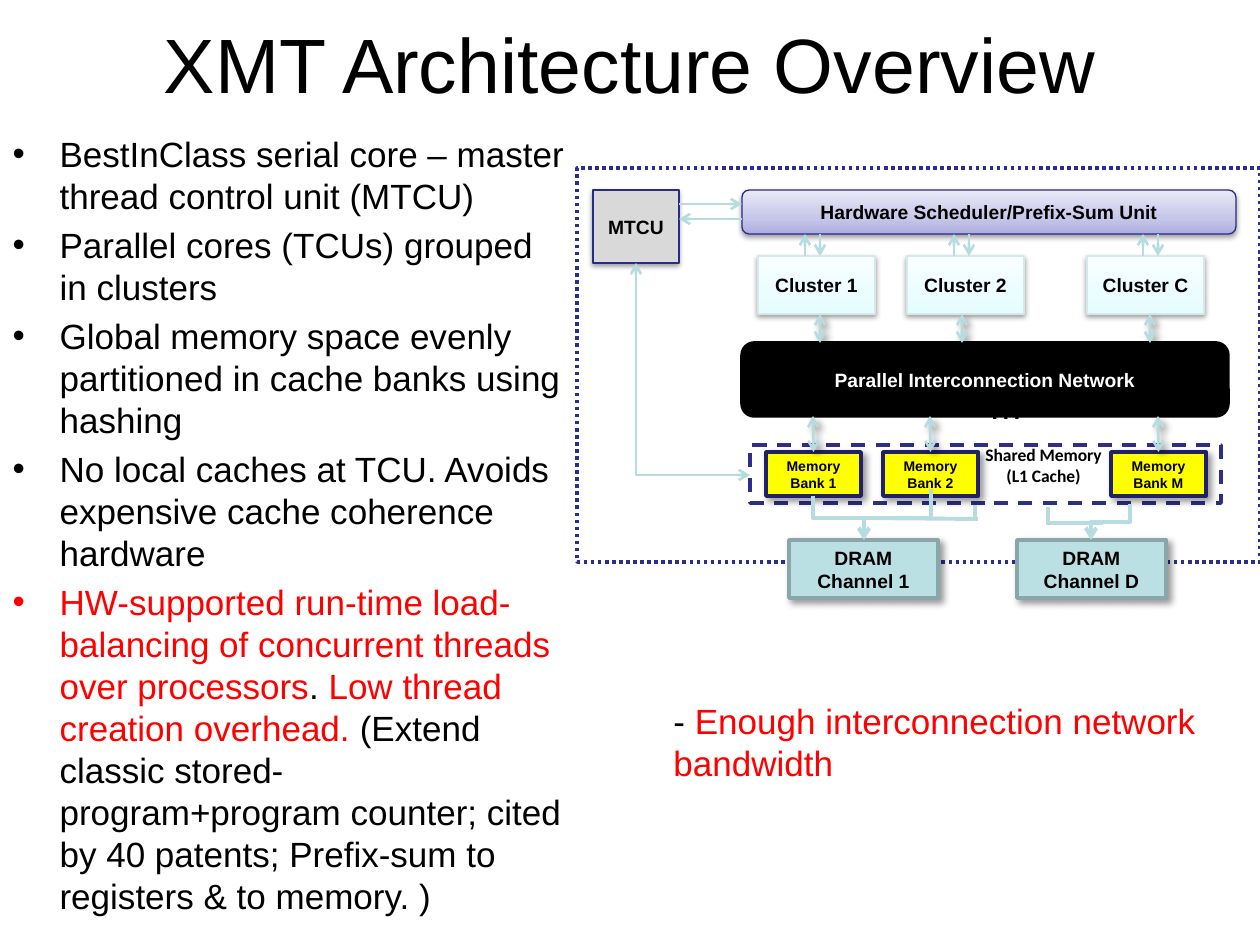
"""Builds the XMT architecture overview slide."""
import copy
from dataclasses import dataclass

import pptx
import pptx.dml.color
import pptx.enum.dml
import pptx.enum.shapes
import pptx.enum.text
import pptx.oxml.ns
import pptx.util
from lxml import etree

qn = pptx.oxml.ns.qn
SHAPES = pptx.enum.shapes.MSO_SHAPE
DASHES = pptx.enum.dml.MSO_LINE
ALIGN = pptx.enum.text.PP_ALIGN
CONNECTORS = pptx.enum.shapes.MSO_CONNECTOR


@dataclass(frozen=True)
class Theme:
    font: str = "Arial"
    caption_font: str = "Calibri"
    black: str = "000000"
    white: str = "FFFFFF"
    red: str = "FF0000"
    frame: str = "2D2D8A"
    outline: str = "2A2A89"
    grey: str = "D9D9D9"
    yellow: str = "FFFF00"
    bank_edge: str = "212166"
    dram: str = "BBE0E3"
    dram_edge: str = "8AA6A8"
    arrow: str = "B6DCDF"
    cluster_edge: str = "D5E8EA"
    cluster_fill: tuple = ("E6FDFF", "ECFDFF", "F8FEFF")
    scheduler_fill: tuple = ("ADADE1", "C6C6E9", "E9E9F7")
    title_size: int = 44
    body_size: int = 20
    label_size: int = 11
    caption_size: int = 10
    bank_size: int = 8
    soft_shadow: tuple = (38, 3.1, 1.6, 90)
    drop_shadow: tuple = (40, 4, 3, 45)


def px(value):
    return pptx.util.Emu(round(value * 914400 / 126))


def rgb(value):
    return pptx.dml.color.RGBColor.from_string(value)


class SlideBuilder:
    def __init__(self, slide, theme):
        self.slide, self.theme = slide, theme

    def place(self, shape, box):
        shape.left, shape.top, shape.width, shape.height = map(px, box)

    def style(self, paragraph, size, color=None, bold=None, font=None, align=None):
        paragraph.font.name = font or self.theme.font
        paragraph.font.size = pptx.util.Pt(size)
        paragraph.font.bold = bold
        paragraph.font.color.rgb = rgb(color or self.theme.black)
        paragraph.alignment = align

    def fill_text(self, frame, paragraphs, size, **style):
        """Each paragraph is a string or a list of (text, color) runs."""
        for index, content in enumerate(paragraphs):
            paragraph = frame.add_paragraph() if index else frame.paragraphs[0]
            self.style(paragraph, size, **style)
            if isinstance(content, str):
                paragraph.add_run().text = content
                continue
            for text, color in content:
                run = paragraph.add_run()
                run.text = text
                run.font.color.rgb = rgb(color)

    def title(self, text, box):
        shape = self.slide.shapes.title
        self.place(shape, box)
        self.fill_text(shape.text_frame, [text], self.theme.title_size, align=ALIGN.CENTER)

    def bullets(self, items, box, indent):
        shape = self.slide.placeholders[1]
        self.place(shape, box)
        shape.text_frame.auto_size = pptx.enum.text.MSO_AUTO_SIZE.NONE
        self.fill_text(shape.text_frame, items, self.theme.body_size)
        for paragraph in shape.text_frame.paragraphs:
            properties = paragraph._p.get_or_add_pPr()
            properties.set("marL", str(px(indent)))
            properties.set("indent", str(-px(indent)))

    def text(self, paragraphs, box, size, wrap=True, **style):
        shape = self.slide.shapes.add_textbox(*map(px, box))
        shape.text_frame.word_wrap = wrap
        self.fill_text(shape.text_frame, paragraphs, size, **style)

    def add_shadow(self, effects, shadow):
        alpha, blur, distance, angle = shadow
        outer = etree.SubElement(effects, qn("a:outerShdw"), blurRad=str(round(blur * 12700)),
                                 dist=str(round(distance * 12700)), dir=str(angle * 60000),
                                 rotWithShape="0")
        color = etree.SubElement(outer, qn("a:srgbClr"), val=self.theme.black)
        etree.SubElement(color, qn("a:alpha"), val=str(alpha * 1000))

    def gradient(self, shape, colors):
        shape.fill.gradient()
        shape.fill.gradient_angle = 90
        stops = shape.element.spPr.find(".//" + qn("a:gsLst"))
        stops.append(copy.deepcopy(stops[0]))
        for stop, color, position in zip(shape.fill.gradient_stops, colors, (0, 0.35, 1)):
            stop.color.rgb, stop.position = rgb(color), position

    def box(self, box, line, width, fill=None, label=None, size=None, color=None,
            kind=SHAPES.RECTANGLE, dash=None, shadow=None):
        shape = self.slide.shapes.add_shape(kind, *map(px, box))
        if fill is None:
            shape.fill.background()
        elif isinstance(fill, tuple):
            self.gradient(shape, fill)
        else:
            shape.fill.solid()
            shape.fill.fore_color.rgb = rgb(fill)
        shape.line.color.rgb = rgb(line)
        shape.line.width = pptx.util.Pt(width)
        if dash is not None:
            shape.line.dash_style = dash
        shape.shadow.inherit = False
        if shadow:
            self.add_shadow(shape.element.spPr.find(qn("a:effectLst")), shadow)
        if label:
            self.fill_text(shape.text_frame, [label], size or self.theme.label_size,
                           color=color, bold=True, align=ALIGN.CENTER)
        return shape

    def line(self, begin, end, width=1.5, head=False, tail=False, shadow=None,
             kind=CONNECTORS.STRAIGHT):
        connector = self.slide.shapes.add_connector(kind, *map(px, begin + end))
        connector.line.color.rgb = rgb(self.theme.arrow)
        connector.line.width = pptx.util.Pt(width)
        outline = connector.element.spPr.find(qn("a:ln"))
        for tag, shown in (("a:headEnd", head), ("a:tailEnd", tail)):
            if shown:
                etree.SubElement(outline, qn(tag), type="arrow")
        effects = etree.SubElement(connector.element.spPr, qn("a:effectLst"))
        if shadow:
            self.add_shadow(effects, shadow)
        return connector

    def elbow(self, begin, end, preset, **options):
        """Draws a connector that leaves its begin point downwards."""
        connector = self.line(begin, end, kind=CONNECTORS.ELBOW, **options)
        across, down = abs(end[0] - begin[0]), end[1] - begin[1]
        middle_x, middle_y = (begin[0] + end[0]) / 2, (begin[1] + end[1]) / 2
        transform = connector.element.spPr.find(qn("a:xfrm"))
        rightward = end[0] > begin[0]
        transform.set("flipH", "1" if rightward else "0")
        transform.set("rot", str((270 if rightward else 90) * 60000))
        self.place(connector, (middle_x - down / 2, middle_y - across / 2, down, across))
        connector.element.spPr.find(qn("a:prstGeom")).set("prst", preset)


def draw_architecture(builder, theme):
    builder.box((750, 445, 471, 58), theme.frame, 2, dash=DASHES.DASH)
    builder.box((577, 168, 683, 394), theme.frame, 2, dash=DASHES.ROUND_DOT)
    builder.box((593, 190, 86, 73), theme.outline, 0.75, theme.grey, "MTCU",
                shadow=theme.soft_shadow)
    builder.box((742, 190, 494, 44), theme.outline, 0.75, theme.scheduler_fill,
                "Hardware Scheduler/Prefix-Sum Unit", kind=SHAPES.ROUNDED_RECTANGLE,
                shadow=theme.soft_shadow)
    builder.box((742, 343, 486, 73), theme.black, 2, theme.black,
                "Parallel Interconnection Network", color=theme.white,
                kind=SHAPES.ROUNDED_RECTANGLE)
    for name, left, up, link in (("1", 758, 805, 820), ("2", 907, 954, 962),
                                 ("C", 1087, 1143, 1150)):
        builder.box((left, 256, 117, 58), theme.cluster_edge, 0.75, theme.cluster_fill,
                    f"Cluster {name}", shadow=theme.soft_shadow)
        builder.line((up, 256), (up, 234), tail=True)
        builder.line((up + 15, 234), (up + 15, 256), tail=True)
        builder.line((link, 314), (link, 343), head=True, tail=True, shadow=theme.drop_shadow)
    for name, left in (("1", 789), ("D", 1017)):
        builder.box((left, 540, 149, 58), theme.dram_edge, 2, theme.dram,
                    f"DRAM Channel {name}", shadow=theme.drop_shadow)
    for name, left in (("1", 766), ("2", 883), ("M", 1111)):
        bank = builder.box((left, 452, 95, 44), theme.bank_edge, 2, theme.yellow,
                           f"Memory Bank {name}", theme.bank_size, shadow=theme.drop_shadow)
        middle = left + 47
        link = builder.line((middle, 416), (middle, 452), head=True, tail=True,
                            shadow=theme.drop_shadow)
        link.end_connect(bank, 0)
    builder.line((679, 204), (742, 204), tail=True)
    builder.line((742, 219), (679, 219), tail=True)
    builder.elbow((636, 263), (750, 475), "bentConnector2", head=True, tail=True)
    builder.elbow((813, 496), (864, 540), "bentConnector3", width=2.25, tail=True)
    builder.elbow((1130, 504), (1091, 540), "bentConnector3", width=2.25, tail=True)
    builder.elbow((931, 489), (868, 518), "bentConnector2", width=2.25)
    for begin, end in (((859, 518), (978, 519)), ((975, 519), (975, 505)),
                       ((1103, 523), (1048, 523)), ((1048, 525), (1048, 507))):
        builder.line(begin, end, width=2.25)
    builder.text(["Shared Memory", "(L1 Cache)"], (969, 438, 149, 77), theme.caption_size,
                 wrap=False, bold=True, font=theme.caption_font, align=ALIGN.CENTER)


def main():
    theme = Theme()
    presentation = pptx.Presentation()
    presentation.slide_width, presentation.slide_height = px(1260), px(945)
    slide = presentation.slides.add_slide(presentation.slide_layouts[1])
    builder = SlideBuilder(slide, theme)
    builder.title("XMT Architecture Overview", (63, 0, 1134, 126))
    builder.bullets([
        "BestInClass serial core – master thread control unit (MTCU)",
        "Parallel cores (TCUs) grouped in clusters",
        "Global memory space evenly partitioned in cache banks using hashing",
        "No local caches at TCU. Avoids expensive cache coherence hardware",
        [("HW-supported run-time load-balancing of concurrent threads over processors", theme.red),
         (". ", theme.black), ("Low thread creation overhead.", theme.red),
         (" (Extend classic stored-program+program counter; cited by 40 patents; "
          "Prefix-sum to registers & to memory. )", theme.black)],
    ], (0, 126, 577, 718), 47)
    draw_architecture(builder, theme)
    builder.text(["…"], (976, 378, 60, 55), theme.body_size, wrap=False)
    builder.text([[("- ", theme.black), ("Enough interconnection network", theme.red)],
                  [("bandwidth", theme.red)]], (661, 693, 599, 97), theme.body_size)
    presentation.save("out.pptx")


if __name__ == "__main__":
    main()
